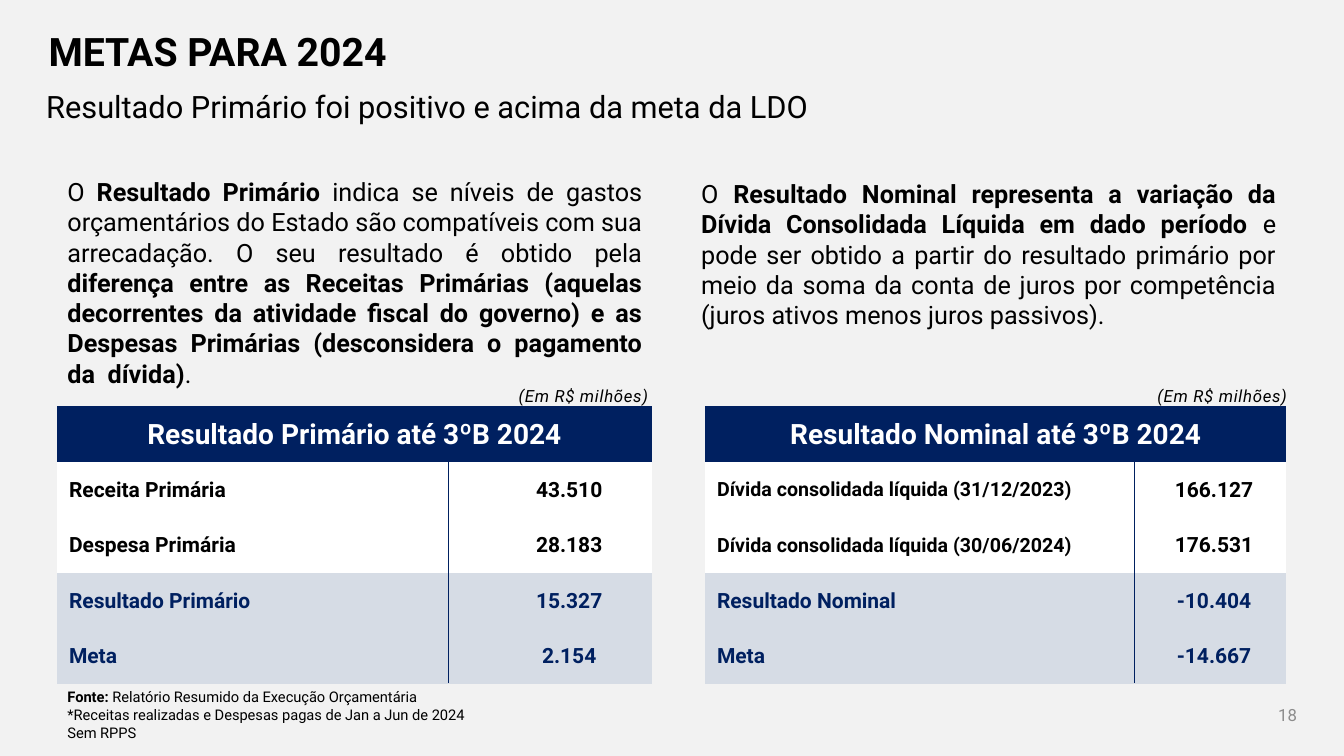
import pptx
import pptx.dml.color
import pptx.enum.shapes
import pptx.enum.text
import pptx.oxml.ns
import pptx.util
import lxml.etree

Cm = pptx.util.Cm
Pt = pptx.util.Pt
RGBColor = pptx.dml.color.RGBColor
Align = pptx.enum.text.PP_ALIGN
Anchor = pptx.enum.text.MSO_ANCHOR
qn = pptx.oxml.ns.qn

BLACK = RGBColor(0, 0, 0)
WHITE = RGBColor(255, 255, 255)
NAVY = RGBColor(0, 32, 96)
PALE = RGBColor(0xD6, 0xDC, 0xE5)
GREY = RGBColor(0x8C, 0x8C, 0x8C)
BACK = RGBColor(0xF2, 0xF2, 0xF2)


def write(frame, lines, size, hue=BLACK, align=Align.LEFT, space=1.0, **extra):
    for i, line in enumerate(lines):
        para = frame.paragraphs[0] if i == 0 else frame.add_paragraph()
        layout = {"alignment": align, "line_spacing": space, "space_before": Pt(0)}
        for key, value in layout.items():
            setattr(para, key, value)
        for text, bold in line:
            run = para.add_run()
            run.text = text
            look = {"name": "Roboto", "size": Pt(size), "bold": bold, **extra}
            for key, value in look.items():
                setattr(run.font, key, value)
            run.font.color.rgb = hue


def place(shape, left, top, width, height, anchor=Anchor.TOP):
    box = {"left": left, "top": top, "width": width, "height": height}
    for key, value in box.items():
        setattr(shape, key, Cm(value))
    frame = shape.text_frame
    form = {"word_wrap": True, "vertical_anchor": anchor,
            "auto_size": pptx.enum.text.MSO_AUTO_SIZE.NONE}
    for key, value in form.items():
        setattr(frame, key, value)
    return frame


deck = pptx.Presentation()
deck.slide_width = Cm(33.87)
deck.slide_height = Cm(19.05)
slide = deck.slides.add_slide(deck.slide_layouts[1])
slide.background.fill.solid()
slide.background.fill.fore_color.rgb = BACK
shapes = slide.shapes

frame = place(shapes.title, 0.97, 0.36, 19.94, 2, Anchor.MIDDLE)
write(frame, [[("METAS PARA 2024", True)]], 28, space=0.9)

frame = place(slide.placeholders[1], 0.91, 1.83, 32, 1.5, Anchor.MIDDLE)
props = frame.paragraphs[0]._p.get_or_add_pPr()
props.set("marL", "0")
props.set("indent", "0")
lxml.etree.SubElement(props, qn("a:buNone"))
write(frame, [[("Resultado Primário foi positivo e acima da meta da LDO", False)]], 22, space=1.2)

panels = [
    {"left": 1.45, "top": 4.32, "tall": 5.64, "cols": (10.82, 4.17), "rule": 11.3,
     "unit": 11.28, "small": 15,
     "text": [("O ", False), ("Resultado Primário ", True),
              ("indica se níveis de gastos orçamentários do Estado são compatíveis com sua "
               "arrecadação. O seu resultado é obtido pela ", False),
              ("diferença entre as Receitas Primárias (aquelas decorrentes da atividade fiscal "
               "do governo) e as Despesas Primárias (desconsidera o pagamento da  dívida)", True),
              (".", False)],
     "head": "Resultado Primário até 3ºB 2024",
     "rows": [("Receita Primária", "43.510"), ("Despesa Primária", "28.183"),
              ("Resultado Primário", "15.327"), ("Meta", "2.154")]},
    {"left": 17.42, "top": 4.37, "tall": 4.11, "cols": (11, 3.65), "rule": 28.58,
     "unit": 27.38, "small": 14,
     "text": [("O ", False),
              ("Resultado Nominal representa a variação da Dívida Consolidada Líquida "
               "em dado período ", True),
              ("e pode ser obtido a partir do resultado primário por meio da soma da conta "
               "de juros por competência (juros ativos menos juros passivos).", False)],
     "head": "Resultado Nominal até 3ºB 2024",
     "rows": [("Dívida consolidada líquida (31/12/2023)", "166.127"),
              ("Dívida consolidada líquida (30/06/2024)", "176.531"),
              ("Resultado Nominal", "-10.404"), ("Meta", "-14.667")]},
]
ends = [16.43, 32.42]

for panel, end in zip(panels, ends):
    frame = place(shapes.add_textbox(0, 0, 0, 0), panel["left"], panel["top"], 14.99, panel["tall"])
    write(frame, [panel["text"]], 18, align=Align.JUSTIFY)

    wide = sum(panel["cols"])
    item = shapes.add_table(5, 2, Cm(end - wide), Cm(10.24), Cm(wide), Cm(7))
    grid = item.table
    grid.first_row = grid.horz_banding = False
    style = item._element.find(".//" + qn("a:tableStyleId"))
    style.text = "{2D5ABB26-0587-4C30-8999-92F81FD0307C}"
    for col, width in zip(grid.columns, panel["cols"]):
        col.width = Cm(width)
    grid.cell(0, 0).merge(grid.cell(0, 1))
    for r, pair in enumerate([(panel["head"],)] + panel["rows"]):
        grid.rows[r].height = Cm(1.4)
        fill = NAVY if r == 0 else WHITE if r < 3 else PALE
        hue = WHITE if r == 0 else BLACK if r < 3 else NAVY
        for c, text in enumerate(pair):
            cell = grid.cell(r, c)
            cell.fill.solid()
            cell.fill.fore_color.rgb = fill
            label = r > 0 and c == 0
            form = {"margin_left": Cm(0.3 if label else 0.03), "margin_top": Cm(0.03),
                    "margin_right": Cm(0.03), "margin_bottom": 0,
                    "vertical_anchor": Anchor.MIDDLE}
            for key, value in form.items():
                setattr(cell, key, value)
            size = 20 if r == 0 else panel["small"] if label and r < 3 else 15
            write(cell.text_frame, [[(text, True)]], size, hue,
                  Align.LEFT if label else Align.CENTER)

    frame = place(shapes.add_textbox(0, 0, 0, 0), panel["unit"], 9.5, 5.31, 1.07)
    write(frame, [[("(Em R$ milhões)", False)]], 12, align=Align.RIGHT, space=1.2, italic=True)
    frame.paragraphs[0].runs[0]._r.get_or_add_rPr().set("spc", "50")

    rule = shapes.add_connector(pptx.enum.shapes.MSO_CONNECTOR.STRAIGHT,
                                Cm(panel["rule"]), Cm(11.63), Cm(panel["rule"]), Cm(17.22))
    rule.line.color.rgb = NAVY
    rule.line.width = Pt(0.5)
    lxml.etree.SubElement(rule._element.spPr, qn("a:effectLst"))

frame = place(shapes.add_textbox(0, 0, 0, 0), 1.45, 17.22, 12.04, 1.6)
write(frame, [[("Fonte: ", True), ("Relatório Resumido da Execução Orçamentária", False)],
              [("*Receitas realizadas e Despesas pagas de Jan a Jun de 2024", False)],
              [("Sem RPPS", False)]], 10.5)

frame = place(shapes.add_textbox(0, 0, 0, 0), 30.5, 17.5, 2.44, 1.02, Anchor.MIDDLE)
write(frame, [[("18", False)]], 12, GREY, Align.RIGHT)

deck.save("out.pptx")
